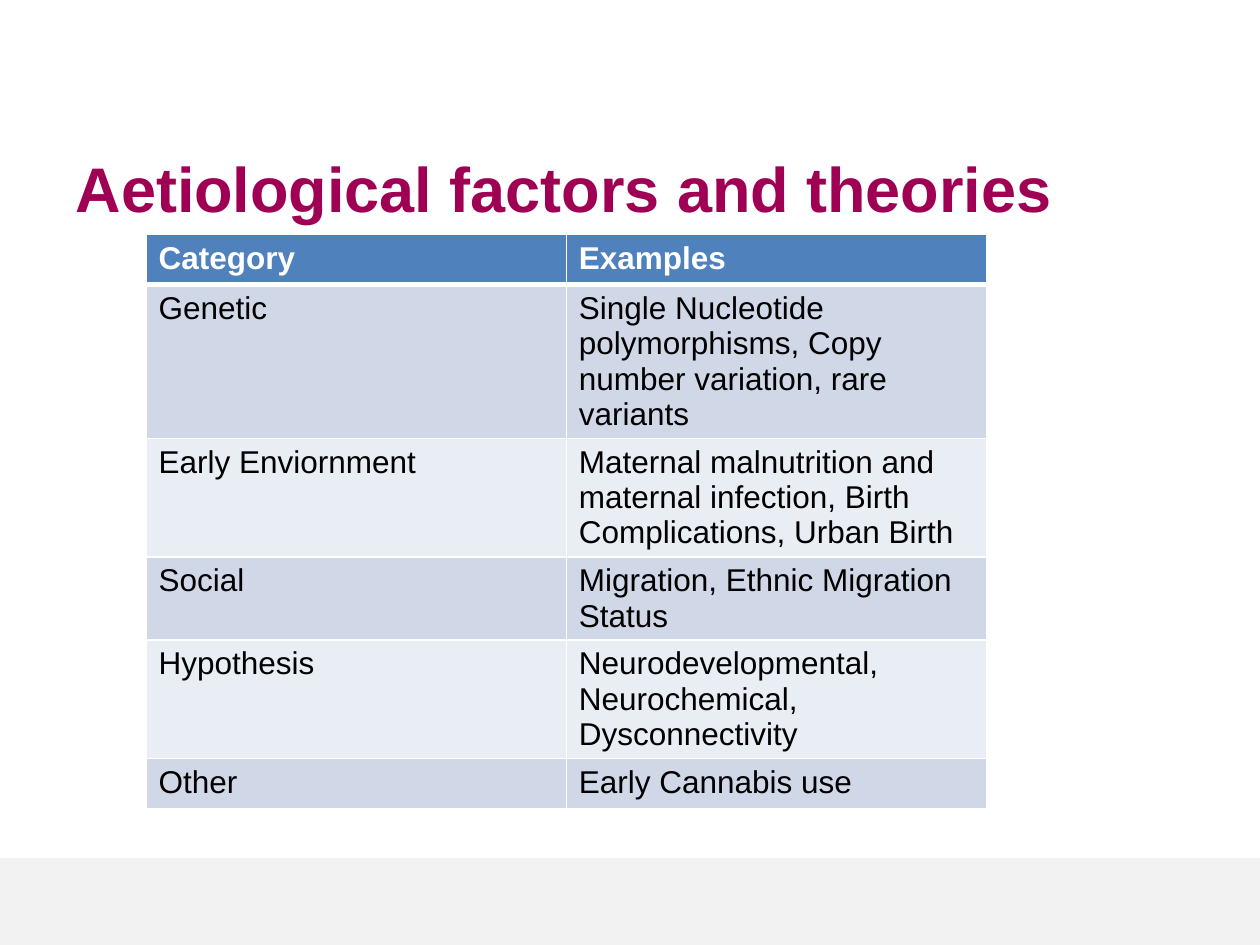
from dataclasses import dataclass

from pptx import Presentation
from pptx.dml.color import RGBColor
from pptx.enum.shapes import MSO_SHAPE
from pptx.enum.text import MSO_ANCHOR, PP_ALIGN
from pptx.oxml import parse_xml
from pptx.oxml.ns import nsdecls
from pptx.util import Inches, Pt

WHITE = RGBColor(0xFF, 0xFF, 0xFF)
BLACK = RGBColor(0x00, 0x00, 0x00)
MAGENTA = RGBColor(0xA0, 0x00, 0x54)
FOOTER_GREY = RGBColor(0xF2, 0xF2, 0xF2)
HEADER_BLUE = RGBColor(0x4F, 0x81, 0xBD)
BANDS = (RGBColor(0xD0, 0xD8, 0xE8), RGBColor(0xE9, 0xED, 0xF4))
FONT = "Arial"


@dataclass
class Factor:
    category: str
    examples: str


HEADER = Factor("Category", "Examples")
FACTORS = [
    Factor("Genetic", "Single Nucleotide polymorphisms, Copy number variation, rare variants"),
    Factor("Early Enviornment",
           "Maternal malnutrition and maternal infection, Birth Complications, Urban Birth"),
    Factor("Social", "Migration, Ethnic Migration Status"),
    Factor("Hypothesis", "Neurodevelopmental, Neurochemical, Dysconnectivity"),
    Factor("Other", "Early Cannabis use"),
]


def set_text(tf, text: str, size: int, color: RGBColor, bold: bool) -> None:
    tf.text = text
    p = tf.paragraphs[0]
    p.alignment = PP_ALIGN.LEFT
    font = p.runs[0].font
    font.name, font.size, font.bold = FONT, Pt(size), bold
    font.color.rgb = color


def set_borders(cell, top: int = 1, bottom: int = 1) -> None:
    """Draw white cell borders; widths are in points."""
    tc_pr = cell._tc.get_or_add_tcPr()
    widths = {"lnL": 1, "lnR": 1, "lnT": top, "lnB": bottom}
    for i, (tag, width) in enumerate(widths.items()):
        tc_pr.insert(i, parse_xml(
            f'<a:{tag} {nsdecls("a")} w="{Pt(width)}"><a:solidFill>'
            f'<a:srgbClr val="{WHITE}"/></a:solidFill></a:{tag}>'))


def fill_row(table, row: int, factor: Factor) -> None:
    is_header = row == 0
    for col, text in enumerate((factor.category, factor.examples)):
        cell = table.cell(row, col)
        set_text(cell.text_frame, text, 18, WHITE if is_header else BLACK, is_header)
        cell.fill.solid()
        cell.fill.fore_color.rgb = HEADER_BLUE if is_header else BANDS[(row - 1) % 2]
        set_borders(cell, top=3 if row == 1 else 1, bottom=3 if is_header else 1)


def main() -> None:
    prs = Presentation()
    prs.slide_width, prs.slide_height = Inches(10), Inches(7.5)
    s = prs.slides.add_slide(prs.slide_layouts[5])

    # Footer band
    band = s.shapes.add_shape(MSO_SHAPE.RECTANGLE, 0, Inches(6.81), Inches(10), Inches(0.69))
    band.shadow.inherit = False
    band.fill.solid()
    band.fill.fore_color.rgb = FOOTER_GREY
    band.line.fill.background()

    # Title
    title = s.shapes.title
    title.left, title.top = Inches(0.5), Inches(1.12)
    title.width, title.height = Inches(8.5), Inches(0.74)
    title.text_frame.vertical_anchor = MSO_ANCHOR.MIDDLE
    set_text(title.text_frame, "Aetiological factors and theories", 36, MAGENTA, True)

    # Table of factors; rows grow to fit their text
    rows = [HEADER, *FACTORS]
    table = s.shapes.add_table(len(rows), 2, Inches(1.16), Inches(1.86),
                               Inches(6.67), Inches(4.81)).table
    for row, factor in enumerate(rows):
        table.rows[row].height = Inches(0.4)
        fill_row(table, row, factor)

    prs.save("out.pptx")


if __name__ == "__main__":
    main()
